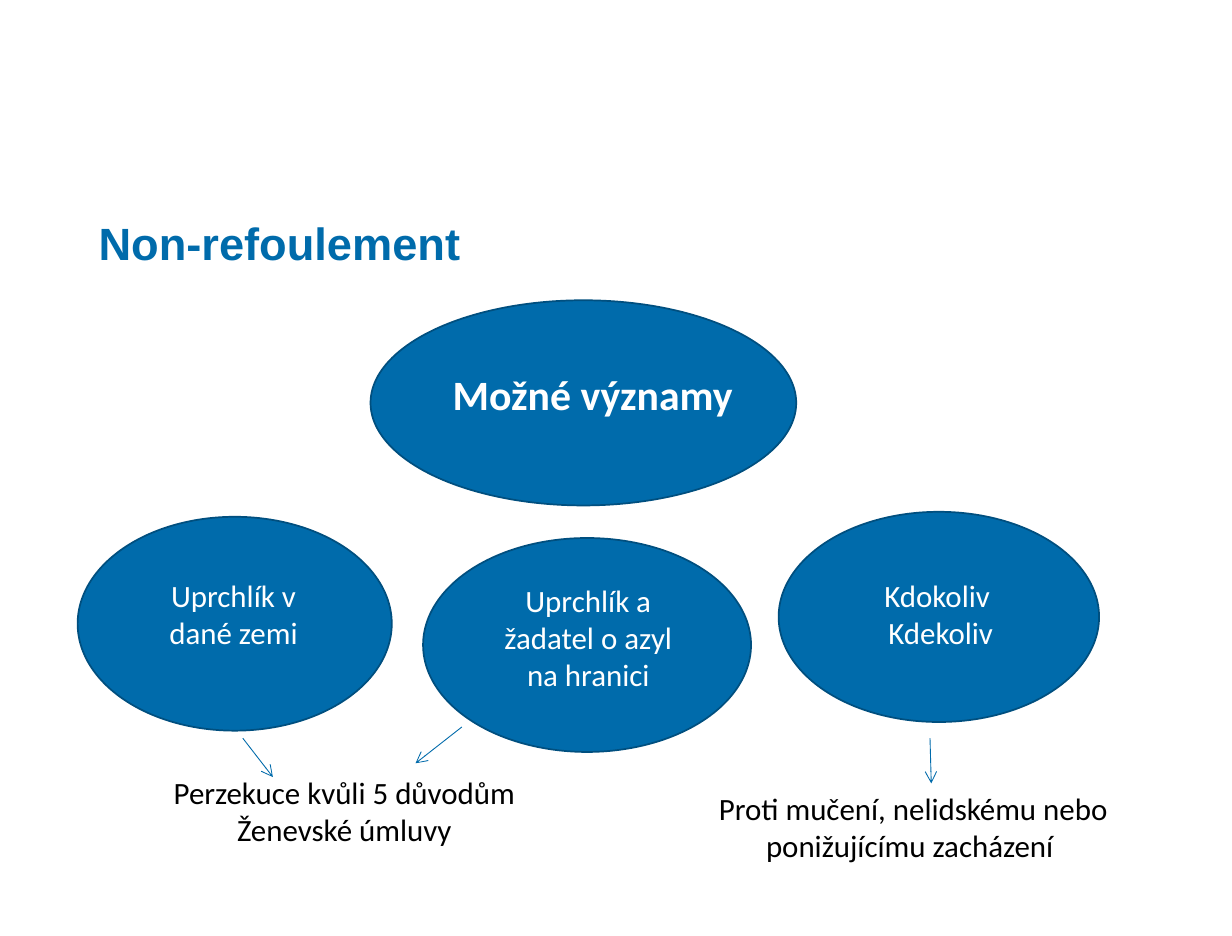
from pptx import Presentation
from pptx.dml.color import RGBColor
from pptx.enum.shapes import MSO_CONNECTOR, MSO_SHAPE
from pptx.enum.text import MSO_ANCHOR, PP_ALIGN
from pptx.oxml.ns import qn
from pptx.util import Cm, Pt
from lxml.etree import SubElement

BLUE, EDGE, WHITE, BLACK = "006BAB", "004F7F", "FFFFFF", "000000"

deck = Presentation()
deck.slide_width, deck.slide_height = Cm(25), Cm(19)
slide = deck.slides.add_slide(deck.slide_layouts[5])
shapes = slide.shapes


def place(*shares):
    """Turn percent shares (x, y, x, y) into lengths on the slide."""
    sides = (deck.slide_width, deck.slide_height) * 2
    return [int(side * share / 100) for side, share in zip(sides, shares)]


def style(font, color, **looks):
    font.color.rgb = RGBColor.from_string(color)
    for name, value in looks.items():
        setattr(font, name, value)


# Title
title = shapes.title
title.left, title.top, title.width, title.height = place(8, 23.66, 84, 10.96)
frame = title.text_frame
frame.text = "Non-refoulement"
setup = {"margin_left": 0, "margin_top": 0, "margin_right": 0, "margin_bottom": 0,
         "vertical_anchor": MSO_ANCHOR.TOP, "word_wrap": True}
for name, value in setup.items():
    setattr(frame, name, value)
head = frame.paragraphs[0]
head.alignment, head.line_spacing = PP_ALIGN.LEFT, 0.9
style(head.font, BLUE, name="Arial", size=Pt(26), bold=True)

# Ovals: the topic, then its three meanings
ovals = [
    (30.08, 32.08, 34.55, 21.92),
    (6.3, 55.21, 25.5, 22.86),
    (34.34, 57.48, 26.62, 22.86),
    (63.2, 54.68, 26.01, 22.46),
]
for spot in ovals:
    oval = shapes.add_shape(MSO_SHAPE.OVAL, *place(*spot))
    oval.shadow.inherit = False
    oval.fill.solid()
    oval.fill.fore_color.rgb = RGBColor.from_string(BLUE)
    oval.line.color.rgb = RGBColor.from_string(EDGE)
    oval.line.width = Pt(1)

# Arrows from the meanings to their grounds
arrows = [
    (19.71, 78.87, 22.15, 83.02),
    (37.49, 77.67, 33.73, 81.55),
    (75.49, 78.87, 75.59, 83.69),
]
for ends in arrows:
    arrow = shapes.add_connector(MSO_CONNECTOR.STRAIGHT, *place(*ends))
    arrow.line.color.rgb = RGBColor.from_string(BLUE)
    arrow.line.width = Pt(0.5)
    SubElement(arrow.line._get_or_add_ln(), qn("a:tailEnd"), type="arrow")
    SubElement(arrow._element.spPr, qn("a:effectLst"))

# Labels in the ovals and grounds below them
labels = [
    ((35.05, 38.77, 26.11, 10.69), "Možné významy", WHITE, 24, True),
    ((11.18, 60.96, 15.54, 9.36), "Uprchlík v dané zemi", WHITE, 17.8, False),
    ((38.71, 61.5, 18.08, 13.37), "Uprchlík a žadatel o azyl na hranici", WHITE, 17.8, False),
    ((67.97, 60.96, 16.76, 9.36), "Kdokoliv \nKdekoliv", WHITE, 17.8, False),
    ((9.75, 81.95, 36.37, 9.36), "Perzekuce kvůli 5 důvodům Ženevské úmluvy", BLACK, 17.8, False),
    ((53.14, 83.69, 41.96, 9.36), "Proti mučení, nelidskému nebo ponižujícímu zacházení ",
     BLACK, 17.8, False),
]
for spot, words, color, size, bold in labels:
    frame = shapes.add_textbox(*place(*spot)).text_frame
    frame.word_wrap = True
    frame.text = words
    for line in frame.paragraphs:
        line.alignment = PP_ALIGN.CENTER
        style(line.font, color, name="Calibri", size=Pt(size), bold=bold)

deck.save("out.pptx")
